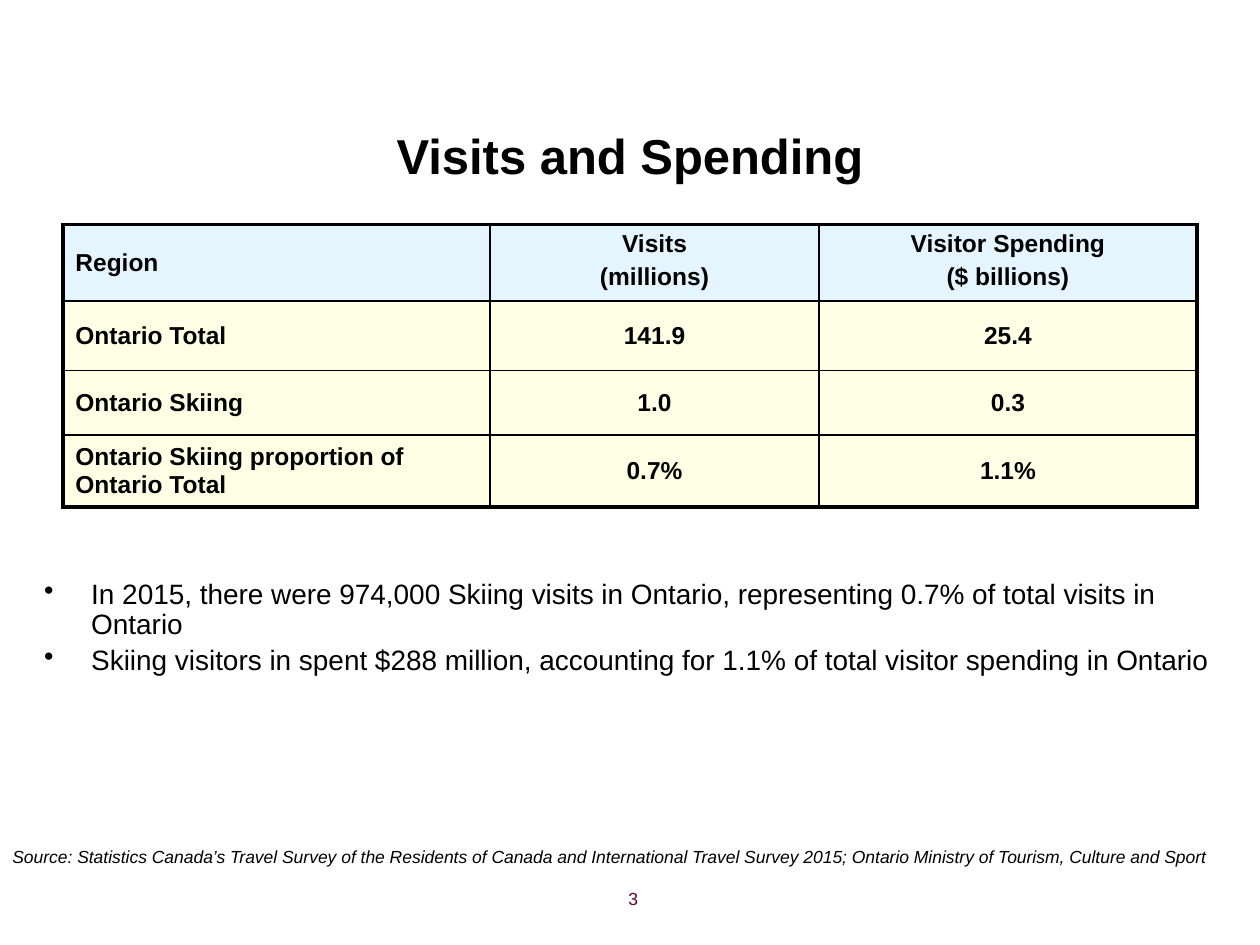
from lxml import etree
from pptx import Presentation, oxml, util as u
from pptx.dml.color import RGBColor
from pptx.enum import text
from pptx.oxml import ns

COLORS = {"ink": "000000", "number": "660033", "header": "CCECFF", "body": "FFFFCC"}
LEFT, CENTER, RIGHT = text.PP_ALIGN.LEFT, text.PP_ALIGN.CENTER, text.PP_ALIGN.RIGHT
TOP, MIDDLE = text.MSO_ANCHOR.TOP, text.MSO_ANCHOR.MIDDLE


def write(frame, lines, size, color="ink", align=LEFT, gap=0, bullet=False, **font_values):
    """Fill a text frame, one paragraph a line."""
    frame.word_wrap = True
    for index, line in enumerate(lines):
        paragraph = frame.add_paragraph() if index else frame.paragraphs[0]
        paragraph.text = line
        paragraph.alignment = align
        paragraph.space_before = u.Pt(gap if index else 0)
        if bullet:
            paragraph.line_spacing = 0.9
            properties = paragraph._p.get_or_add_pPr()
            properties.set("marL", str(u.Cm(0.95)))
            properties.set("indent", str(u.Cm(-0.95)))
            etree.SubElement(properties, ns.qn("a:buChar")).set("char", "•")
        values = {"name": "Arial", "size": u.Pt(size), **font_values}
        for run in paragraph.runs:
            for name, value in values.items():
                setattr(run.font, name, value)
            run.font.color.rgb = RGBColor.from_string(COLORS[color])


def style_cell(cell, fill, widths):
    """Give a cell a half-transparent fill and borders of the given widths."""
    cell.fill.solid()
    cell.fill.fore_color.rgb = RGBColor.from_string(COLORS[fill])
    properties = cell._tc.get_or_add_tcPr()
    fill_color = properties.find(".//" + ns.qn("a:srgbClr"))
    etree.SubElement(fill_color, ns.qn("a:alpha")).set("val", "50000")
    for index, (side, width) in enumerate(widths.items()):
        properties.insert(index, oxml.parse_xml(
            f'<a:ln{side} {ns.nsdecls("a")} w="{u.Pt(width)}"><a:solidFill>'
            f'<a:srgbClr val="{COLORS["ink"]}"/></a:solidFill></a:ln{side}>'))


presentation = Presentation()
presentation.slide_width, presentation.slide_height = u.Cm(25.4), u.Cm(19.05)
slide = presentation.slides.add_slide(presentation.slide_layouts[5])

# Title
title = slide.shapes.title
title.left, title.top, title.width, title.height = u.Cm(1.27), u.Cm(2.18), u.Cm(22.86), u.Cm(1.9)
title.text_frame.vertical_anchor = MIDDLE
write(title.text_frame, ["Visits and Spending"], 28, align=CENTER, bold=True)

# Table
rows = [
    ["Region", "Visits\n(millions)", "Visitor Spending\n($ billions)"],
    ["Ontario Total", "141.9", "25.4"],
    ["Ontario Skiing", "1.0", "0.3"],
    ["Ontario Skiing proportion of Ontario Total", "0.7%", "1.1%"],
]
column_widths = [8.61, 6.63, 7.62]
row_heights = [1.55, 1.4, 1.3, 1.45]
table = slide.shapes.add_table(
    len(rows), len(column_widths), u.Cm(1.27), u.Cm(4.52),
    u.Cm(sum(column_widths)), u.Cm(sum(row_heights))).table
for column, width in zip(table.columns, column_widths):
    column.width = u.Cm(width)
for row, height in zip(table.rows, row_heights):
    row.height = u.Cm(height)

last_row, last_column = len(rows) - 1, len(column_widths) - 1
for r, row in enumerate(rows):
    for c, value in enumerate(row):
        cell = table.cell(r, c)
        is_header, is_label = r == 0, c == 0
        cell.vertical_anchor = TOP if is_header and not is_label else MIDDLE
        has_margin = is_header or is_label
        cell.margin_left = cell.margin_right = u.Cm(0.25 if has_margin else 0)
        cell.margin_top = cell.margin_bottom = u.Cm(0.13 if has_margin else 0)
        write(cell.text_frame, value.split("\n"), 14,
              align=LEFT if is_label else CENTER, gap=2.8, bold=True)
        outer = {"L": is_label, "R": c == last_column, "T": is_header, "B": r == last_row}
        style_cell(cell, "header" if is_header else "body",
                   {side: 2.25 if edge else 1 for side, edge in outer.items()})

# Findings, page number and source line
boxes = [
    ((0.64, 11.58, 24.13, 4.7),
     ["In 2015, there were 974,000 Skiing visits in Ontario, representing 0.7% of total visits in Ontario",
      "Skiing visitors in spent $288 million, accounting for 1.1% of total visitor spending in Ontario"],
     {"size": 16, "gap": 3.2, "bullet": True}),
    ((7.19, 17.78, 5.92, 0.89), ["3"], {"size": 10, "color": "number", "align": RIGHT}),
    ((0, 16.94, 24.89, 0.69),
     ["Source: Statistics Canada’s Travel Survey of the Residents of Canada and International "
      "Travel Survey 2015; Ontario Ministry of Tourism, Culture and Sport"],
     {"size": 10, "italic": True}),
]
for place, lines, formats in boxes:
    box = slide.shapes.add_textbox(*[u.Cm(length) for length in place])
    write(box.text_frame, lines, **formats)

presentation.save("out.pptx")
